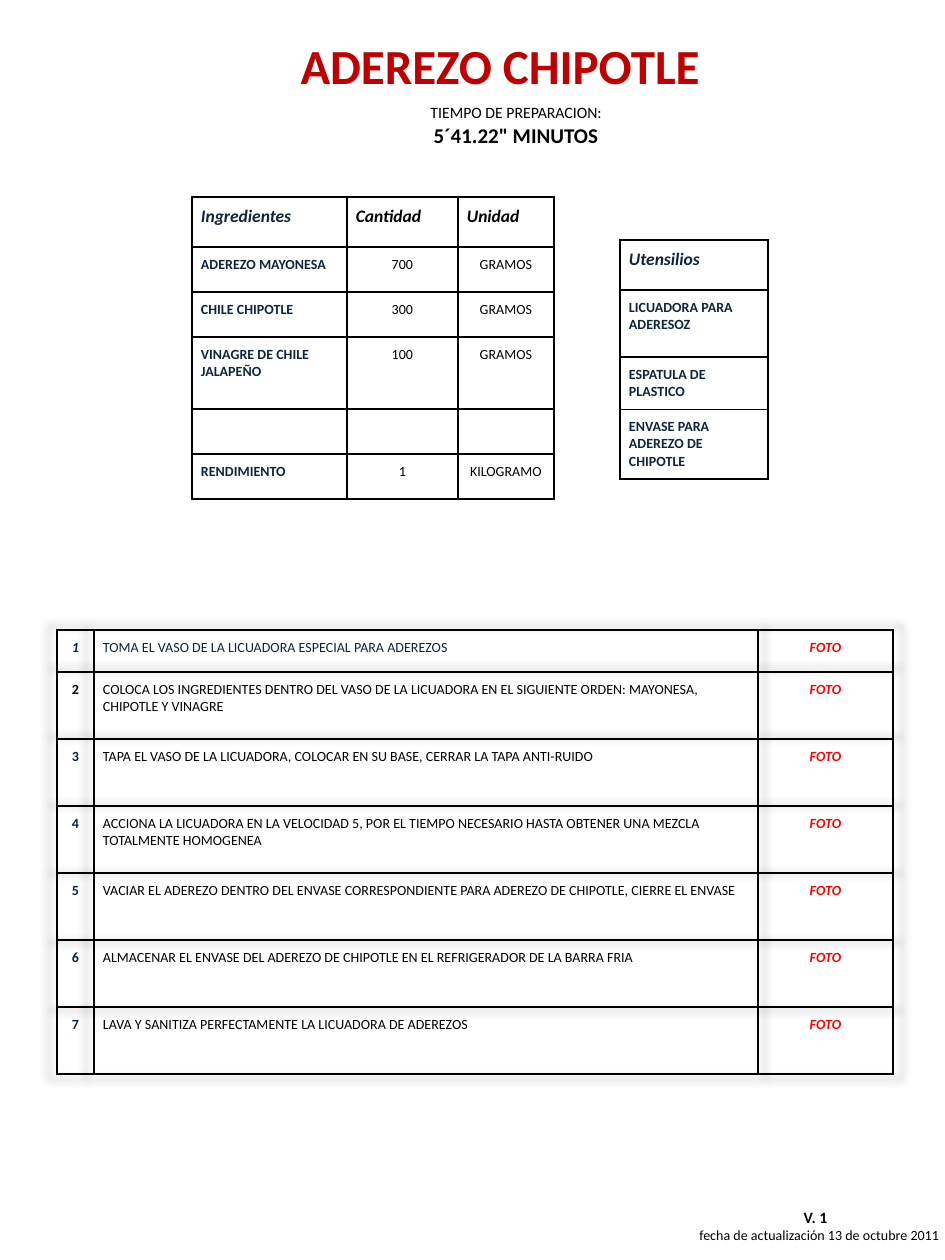
from dataclasses import dataclass
from typing import NamedTuple

from lxml.etree import SubElement
from pptx import Presentation
from pptx.dml.color import RGBColor
from pptx.enum.text import MSO_ANCHOR as Anchor, MSO_AUTO_SIZE as AutoSize, PP_ALIGN as Align
from pptx.oxml import parse_xml
from pptx.oxml.ns import qn
from pptx.util import Emu, Pt

PX = 914400 / 126
NO_STYLE = "{2D5ABB26-0587-4C30-8999-92F81FD0307C}"
A_NS = "http://schemas.openxmlformats.org/drawingml/2006/main"


@dataclass(frozen=True)
class Theme:
    font: str = "Calibri"
    title: str = "C00000"
    navy: str = "0F243E"
    black: str = "000000"
    red: str = "FF0000"
    title_size: int = 28
    time_size: int = 12
    head_size: int = 10
    note_size: int = 9
    body_size: int = 8


T = Theme()


class Box(NamedTuple):
    x: int
    y: int
    w: int
    h: int


class Line(NamedTuple):
    text: str
    size: int = T.body_size
    color: str = T.black
    bold: bool = False
    italic: bool = False
    align: Align = Align.LEFT


@dataclass(frozen=True)
class Grid:
    x: int
    y: int
    cols: list[int]
    rows: list[int]
    cells: list[list[list[Line]]]
    border: bool = True
    shadow: bool = False
    margins: tuple[int, int] = (9, 9)


def px(n: int) -> Emu:
    return Emu(round(n * PX))


def place(sp, box: Box) -> None:
    for name, value in zip(("left", "top", "width", "height"), box):
        setattr(sp, name, px(value))


def write(tf, lines: list[Line]) -> None:
    for i, line in enumerate(lines):
        p = tf.add_paragraph() if i else tf.paragraphs[0]
        p.alignment = line.align
        if not line.text:
            p._p.get_or_add_endParaRPr().set("sz", str(line.size * 100))
            continue
        r = p.add_run()
        r.text = line.text
        values = {"name": T.font, "size": Pt(line.size), "bold": line.bold, "italic": line.italic}
        for name, value in values.items():
            setattr(r.font, name, value)
        r.font.color.rgb = RGBColor.from_string(line.color)


def add_borders(cell) -> None:
    tc_pr = cell._tc.get_or_add_tcPr()
    for i, side in enumerate(("lnL", "lnR", "lnT", "lnB")):
        ln = SubElement(tc_pr, qn(f"a:{side}"), w=str(Pt(1)))
        fill = SubElement(ln, qn("a:solidFill"))
        SubElement(fill, qn("a:srgbClr"), val=T.black)
        tc_pr.insert(i, ln)


def add_shadow(table) -> None:
    table._tbl.tblPr.insert(0, parse_xml(
        f'<a:effectLst xmlns:a="{A_NS}">'
        '<a:outerShdw blurRad="63500" sx="102000" sy="102000" algn="ctr" rotWithShape="0">'
        '<a:srgbClr val="000000"><a:alpha val="40000"/></a:srgbClr>'
        '</a:outerShdw></a:effectLst>'))


def draw_grid(s, g: Grid) -> None:
    size = (px(g.x), px(g.y), px(sum(g.cols)), px(sum(g.rows)))
    table = s.shapes.add_table(len(g.rows), len(g.cols), *size).table
    table.first_row = table.horz_banding = False
    table._tbl.tblPr.find(qn("a:tableStyleId")).text = NO_STYLE
    for col, w in zip(table.columns, g.cols):
        col.width = px(w)
    for row, h in zip(table.rows, g.rows):
        row.height = px(h)
    side, end = map(px, g.margins)
    margins = {"margin_left": side, "margin_right": side, "margin_top": end, "margin_bottom": end}
    for row, contents in zip(table.rows, g.cells):
        for cell, lines in zip(row.cells, contents):
            for name, value in margins.items():
                setattr(cell, name, value)
            cell.fill.background()
            write(cell.text_frame, lines)
            if g.border:
                add_borders(cell)
    if g.shadow:
        add_shadow(table)


def head(text: str, color: str = T.navy) -> list[Line]:
    return [Line(text, T.head_size, color, True, True)]


def label(text: str) -> list[Line]:
    return [Line(text, color=T.navy, bold=True)]


def value(text: str) -> list[Line]:
    return [Line(text, align=Align.CENTER)]


def step_row(n: int, text: str) -> list[list[Line]]:
    number = Line(str(n), color=T.black if n == 2 else T.navy, bold=True,
                  italic=n == 1, align=Align.CENTER)
    action = Line(text, color=T.navy if n == 1 else T.black)
    photo = Line("FOTO", color=T.red, bold=True, italic=True, align=Align.CENTER)
    return [[number], [action], [photo]]


INGREDIENTS = [
    ("ADEREZO MAYONESA", "700", "GRAMOS"),
    ("CHILE CHIPOTLE", "300", "GRAMOS"),
    ("VINAGRE DE CHILE JALAPEÑO", "100", "GRAMOS"),
    ("", "", ""),
    ("RENDIMIENTO", "1", "KILOGRAMO"),
]
TOOLS = ["LICUADORA PARA ADERESOZ", "ESPATULA DE PLASTICO", "ENVASE PARA ADEREZO DE CHIPOTLE"]
STEPS = [
    "TOMA EL VASO DE LA LICUADORA ESPECIAL PARA ADEREZOS",
    "COLOCA LOS INGREDIENTES DENTRO DEL VASO DE LA LICUADORA EN EL SIGUIENTE ORDEN: "
    "MAYONESA, CHIPOTLE Y VINAGRE",
    "TAPA EL VASO DE LA LICUADORA, COLOCAR EN SU BASE, CERRAR LA TAPA ANTI-RUIDO",
    "ACCIONA LA LICUADORA EN LA VELOCIDAD 5, POR EL TIEMPO NECESARIO HASTA OBTENER UNA MEZCLA "
    "TOTALMENTE HOMOGENEA",
    "VACIAR EL ADEREZO DENTRO DEL ENVASE CORRESPONDIENTE PARA ADEREZO DE CHIPOTLE, CIERRE EL ENVASE",
    "ALMACENAR EL ENVASE DEL ADEREZO DE CHIPOTLE EN EL REFRIGERADOR DE LA BARRA FRIA",
    "LAVA Y SANITIZA PERFECTAMENTE LA LICUADORA DE ADEREZOS",
]
GRIDS = [
    Grid(192, 197, [155, 111, 96], [50, 45, 45, 72, 45, 45],
         [[head("Ingredientes"), head("Cantidad", T.black), head("Unidad", T.black)]]
         + [[label(name), value(amount), value(unit)] for name, amount, unit in INGREDIENTS]),
    Grid(57, 630, [37, 664, 135], [42] + [67] * 6,
         [step_row(n, text) for n, text in enumerate(STEPS, 1)], shadow=True),
    Grid(620, 240, [148], [50, 67, 50, 67], [[head("Utensilios")]] + [[label(t)] for t in TOOLS]),
    Grid(393, 98, [246], [57],
         [[[Line("TIEMPO DE PREPARACION:", T.note_size, align=Align.CENTER),
            Line('5´41.22" MINUTOS', T.time_size, bold=True, align=Align.CENTER)]]],
         border=False, margins=(13, 6)),
]


def main() -> None:
    prs = Presentation()
    prs.slide_width, prs.slide_height = px(945), px(1260)
    s = prs.slides.add_slide(prs.slide_layouts[5])

    title = s.shapes.title
    place(title, Box(262, 29, 476, 72))
    tf = title.text_frame
    tf.auto_size, tf.vertical_anchor = AutoSize.NONE, Anchor.TOP
    write(tf, [Line("ADEREZO CHIPOTLE", T.title_size, T.title, True, align=Align.CENTER)])

    for g in GRIDS:
        draw_grid(s, g)

    version = s.shapes.add_textbox(px(679), px(1201), px(273), px(49))
    tf = version.text_frame
    tf.word_wrap, tf.vertical_anchor = False, Anchor.MIDDLE
    write(tf, [Line("V. 1", T.note_size, bold=True, align=Align.CENTER),
               Line("fecha de actualización 13 de octubre 2011", align=Align.RIGHT)])
    prs.save("out.pptx")


if __name__ == "__main__":
    main()
